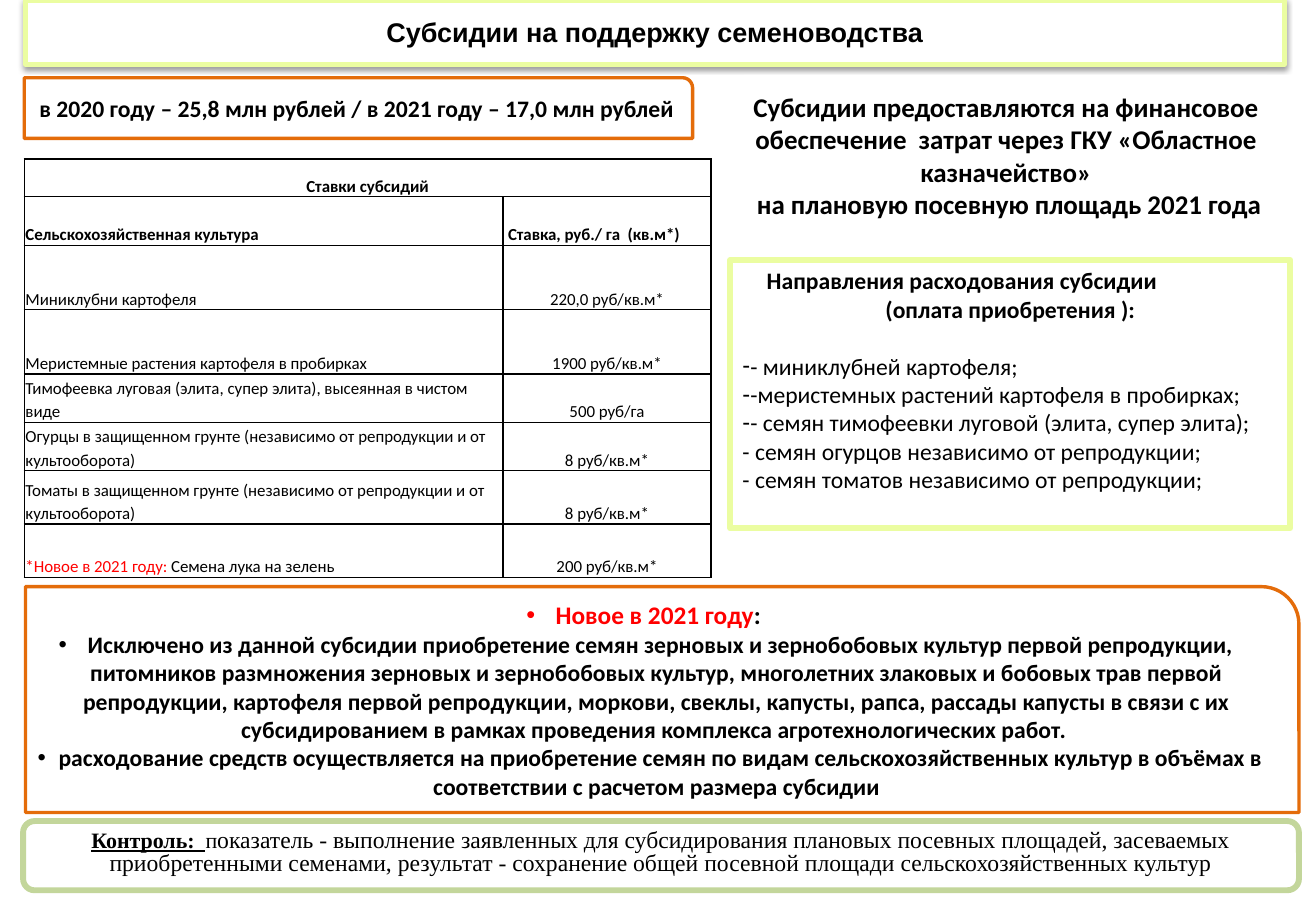
"""Build the slide about seed production subsidies."""
from dataclasses import dataclass

from lxml.etree import SubElement
from pptx import Presentation
from pptx.dml.color import RGBColor
from pptx.enum.shapes import MSO_SHAPE
from pptx.enum.text import MSO_ANCHOR, MSO_AUTO_SIZE, PP_ALIGN
from pptx.oxml import parse_xml
from pptx.oxml.ns import nsdecls, qn
from pptx.util import Inches, Pt


@dataclass(frozen=True)
class Theme:
    black: str = "000000"
    white: str = "FFFFFF"
    red: str = "FF0000"
    lime: str = "EBFDA1"
    orange: str = "E46C0A"
    green: str = "C3D69B"
    heading: int = 16
    news: int = 15
    body: int = 14
    control: int = 13
    table: int = 10
    font: str = "Calibri"
    title_font: str = "Arial"
    control_font: str = "Times New Roman"


theme = Theme()


def style_box(shape, box, geometry, color, width, anchor):
    """Place a shape and give it a white fill and a coloured outline."""
    shape.left, shape.top, shape.width, shape.height = [Inches(value) for value in box]
    if shape.is_placeholder:
        outline = SubElement(shape._element.spPr, qn("a:prstGeom"), prst=geometry)
        SubElement(outline, qn("a:avLst"))
    shape.fill.solid()
    shape.fill.fore_color.rgb = RGBColor.from_string(theme.white)
    shape.line.color.rgb = RGBColor.from_string(color)
    shape.line.width = Pt(width)
    shape.shadow.inherit = False
    frame = shape.text_frame
    frame.word_wrap = True
    frame.auto_size = MSO_AUTO_SIZE.NONE
    frame.vertical_anchor = anchor
    frame.margin_left = frame.margin_right = Inches(0.1)
    frame.margin_top = frame.margin_bottom = Inches(0.05)
    return frame


def write(paragraph, runs, alignment, font=theme.font, bullet=None, left=0, indent=0, before=0):
    """Fill a paragraph with runs of (text, size, colour, bold)."""
    paragraph.alignment = alignment
    paragraph.space_before = Pt(before)
    paragraph.space_after = Pt(0)
    properties = paragraph._p.get_or_add_pPr()
    properties.set("marL", str(Inches(left)))
    properties.set("indent", str(Inches(indent)))
    if bullet:
        SubElement(properties, qn("a:buChar"), char=bullet)
    else:
        SubElement(properties, qn("a:buNone"))
    for text, size, color, bold in runs:
        run = paragraph.add_run()
        run.text = text
        run.font.name = font
        run.font.size = Pt(size)
        run.font.bold = bold
        run.font.color.rgb = RGBColor.from_string(color)


presentation = Presentation()
presentation.slide_width = Inches(10.83)
presentation.slide_height = Inches(7.5)
slide = presentation.slides.add_slide(presentation.slide_layouts[3])
shapes = slide.shapes
title, directions, news = slide.placeholders

frame = style_box(title, (0.21, 0, 10.36, 0.53), "roundRect", theme.lime, 3, MSO_ANCHOR.MIDDLE)
write(frame.paragraphs[0], [("Субсидии на поддержку семеноводства", theme.heading, theme.black, True)],
      PP_ALIGN.CENTER, theme.title_font)
effects = title._element.spPr.find(qn("a:effectLst"))
effects.append(parse_xml(
    f'<a:outerShdw {nsdecls("a")} blurRad="40000" dist="20000" dir="5400000" rotWithShape="0">'
    f'<a:srgbClr val="{theme.black}"><a:alpha val="38000"/></a:srgbClr></a:outerShdw>'))

purpose = shapes.add_shape(MSO_SHAPE.ROUNDED_RECTANGLE, 0, 0, 0, 0)
frame = style_box(purpose, (5.96, 0.64, 4.64, 1.15), "roundRect", theme.white, 3.5, MSO_ANCHOR.TOP)
purpose_lines = [
    "Субсидии предоставляются на финансовое обеспечение  затрат через ГКУ «Областное казначейство»",
    " на плановую посевную площадь 2021 года",
]
for index, text in enumerate(purpose_lines):
    paragraph = frame.add_paragraph() if index else frame.paragraphs[0]
    write(paragraph, [(text, theme.heading, theme.black, True)], PP_ALIGN.CENTER)

frame = style_box(directions, (6.01, 2.14, 4.61, 2.21), "rect", theme.lime, 3.5, MSO_ANCHOR.TOP)
write(frame.paragraphs[0], [("Направления расходования субсидии", theme.body, theme.black, True)],
      PP_ALIGN.LEFT, left=0.2)
write(frame.add_paragraph(), [("(оплата приобретения ):", theme.body, theme.black, True)], PP_ALIGN.CENTER)
direction_items = [
    ("- миниклубней картофеля;", "-", 17),
    ("-меристемных растений картофеля в пробирках;", "-", 0),
    ("- семян тимофеевки луговой (элита, супер элита);", "-", 0),
    ("- семян огурцов независимо от репродукции;", None, 0),
    ("- семян томатов независимо от репродукции;", None, 0),
]
for text, bullet, before in direction_items:
    write(frame.add_paragraph(), [(text, theme.body, theme.black, False)], PP_ALIGN.LEFT,
          bullet=bullet, before=before)

control = shapes.add_shape(MSO_SHAPE.ROUNDED_RECTANGLE, 0, 0, 0, 0)
frame = style_box(control, (0.19, 6.76, 10.5, 0.57), "roundRect", theme.green, 3.5, MSO_ANCHOR.TOP)
paragraph = frame.paragraphs[0]
write(paragraph, [
    ("Контроль:  ", theme.control, theme.black, True),
    ("п", theme.control, theme.black, False),
    ("оказатель - выполнение заявленных для субсидирования плановых посевных площадей, засеваемых "
     "приобретенными семенами, результат - сохранение общей посевной площади сельскохозяйственных культур",
     theme.body, theme.black, False),
], PP_ALIGN.CENTER, theme.control_font)
paragraph.line_spacing = 0.8
paragraph.runs[0].font.underline = True

budget = shapes.add_shape(MSO_SHAPE.ROUND_1_RECTANGLE, 0, 0, 0, 0)
frame = style_box(budget, (0.2, 0.64, 5.5, 0.5), "round1Rect", theme.orange, 2, MSO_ANCHOR.MIDDLE)
write(frame.paragraphs[0],
      [("в 2020 году – 25,8 млн рублей / в 2021 году – 17,0 млн рублей", theme.body, theme.black, True)],
      PP_ALIGN.CENTER)

rates = [
    ("Ставки субсидий", "", 0.31),
    ("Сельскохозяйственная культура", " Ставка, руб./ га  (кв.м*)", 0.4),
    ("Миниклубни картофеля", "220,0 руб/кв.м*", 0.53),
    ("Меристемные растения картофеля в пробирках", "1900 руб/кв.м*", 0.53),
    ("Тимофеевка луговая (элита, супер элита), высеянная в чистом виде", "500 руб/га", 0.39),
    ("Огурцы в защищенном грунте (независимо от репродукции и от культооборота)", "8 руб/кв.м*", 0.39),
    ("Томаты в защищенном грунте (независимо от репродукции и от культооборота)", "8 руб/кв.м*", 0.44),
    ("Семена лука на зелень", "200 руб/кв.м*", 0.44),
]
table = shapes.add_table(len(rates), 2, Inches(0.2), Inches(1.31), Inches(5.65), Inches(3.43)).table
table.columns[0].width = Inches(3.94)
table.columns[1].width = Inches(1.71)
table.cell(0, 0).merge(table.cell(0, 1))
for row, (crop, rate, height) in enumerate(rates):
    table.rows[row].height = Inches(height)
    for column, text in enumerate((crop, rate)):
        cell = table.cell(row, column)
        cell.fill.background()
        cell.vertical_anchor = MSO_ANCHOR.BOTTOM
        cell.margin_left = cell.margin_right = cell.margin_top = Inches(0.01)
        cell.margin_bottom = 0
        for position, side in enumerate(("lnL", "lnR", "lnT", "lnB")):
            cell._tc.get_or_add_tcPr().insert(position, parse_xml(
                f'<a:{side} {nsdecls("a")} w="{Pt(1)}"><a:solidFill>'
                f'<a:srgbClr val="{theme.black}"/></a:solidFill></a:{side}>'))
        if not text:
            continue
        runs = [(text, theme.table, theme.black, row < 2)]
        if (row, column) == (len(rates) - 1, 0):
            runs.insert(0, ("*Новое в 2021 году: ", theme.table, theme.red, False))
        centered = row == 0 or (row > 1 and column == 1)
        paragraph = cell.text_frame.paragraphs[0]
        write(paragraph, runs, PP_ALIGN.CENTER if centered else PP_ALIGN.LEFT)
        paragraph.line_spacing = 1.15

frame = style_box(news, (0.21, 4.83, 10.48, 1.86), "round1Rect", theme.orange, 2, MSO_ANCHOR.MIDDLE)
news_items = [
    [("Новое в 2021 году", theme.news, theme.red, True), (": ", theme.news, theme.black, True)],
    [("Исключено из данной субсидии приобретение семян зерновых и зернобобовых культур первой репродукции, "
      "питомников размножения зерновых и зернобобовых культур, многолетних злаковых и бобовых трав первой "
      "репродукции, картофеля первой репродукции, моркови, свеклы, капусты, рапса, рассады капусты в связи "
      "с их субсидированием в рамках проведения комплекса агротехнологических работ. ",
      theme.body, theme.black, True)],
    [("расходование средств осуществляется на приобретение семян по видам сельскохозяйственных культур "
      "в объёмах в соответствии с расчетом размера субсидии", theme.body, theme.black, True)],
]
for index, runs in enumerate(news_items):
    paragraph = frame.add_paragraph() if index else frame.paragraphs[0]
    write(paragraph, runs, PP_ALIGN.CENTER, bullet="•", indent=-0.24)

presentation.save("out.pptx")
